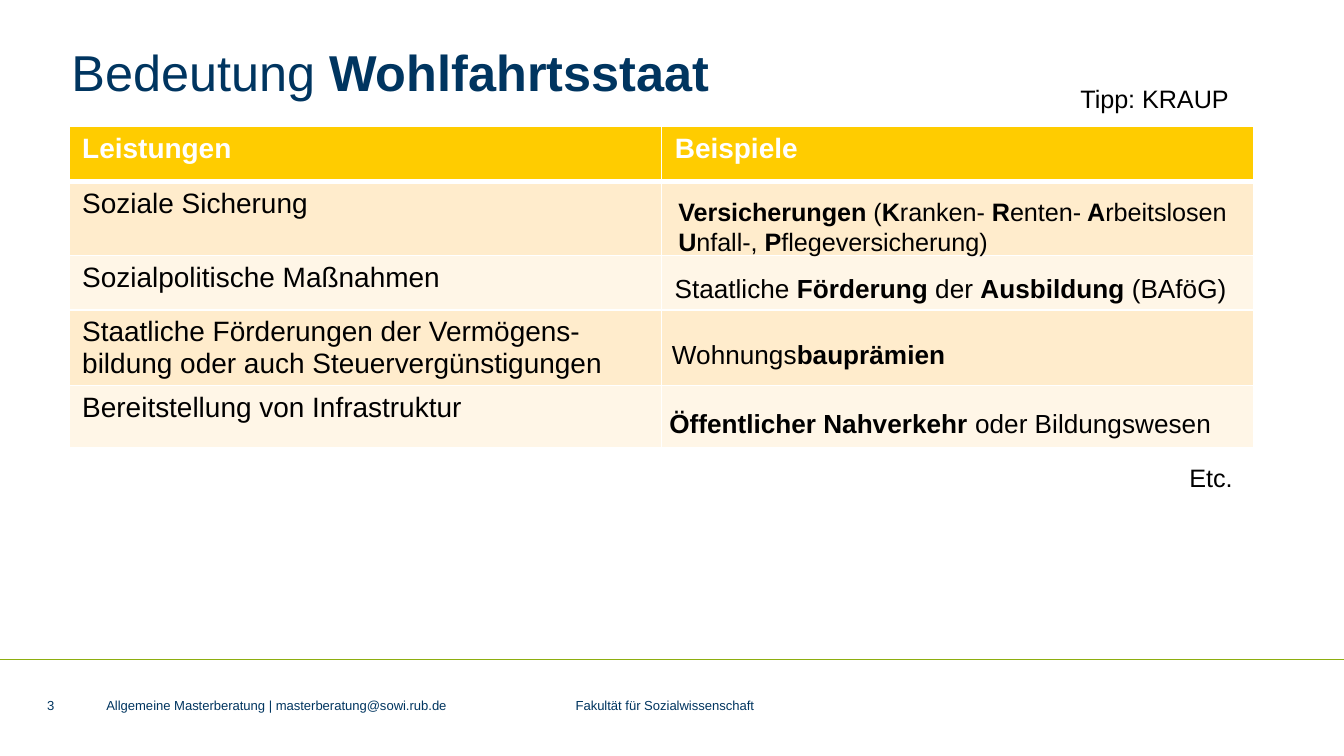
from lxml import etree
from pptx import Presentation
from pptx.dml.color import RGBColor
from pptx.enum.shapes import MSO_CONNECTOR
from pptx.enum.text import MSO_ANCHOR, MSO_AUTO_SIZE, PP_ALIGN
from pptx.oxml.ns import qn
from pptx.util import Cm, Pt

STRAIGHT = MSO_CONNECTOR.STRAIGHT
TOP, MIDDLE = MSO_ANCHOR.TOP, MSO_ANCHOR.MIDDLE
LEFT = PP_ALIGN.LEFT
NO_FIT, GROW = MSO_AUTO_SIZE.NONE, MSO_AUTO_SIZE.SHAPE_TO_FIT_TEXT

TITLE_ONLY = 5
FONT = "Arial"
COLORS = {
    "navy": "003560",
    "black": "000000",
    "white": "FFFFFF",
    "header": "FFCC00",
    "odd": "FFECCC",
    "even": "FFF6E7",
    "rule": "8DAE10",
}

BENEFITS = [
    "Soziale Sicherung",
    "Sozialpolitische Maßnahmen",
    "Staatliche Förderungen der Vermögens-bildung oder auch Steuervergünstigungen",
    "Bereitstellung von Infrastruktur",
]
EXAMPLES = [
    (12.57, 3.58, 1.98, 13.5,
     "**Versicherungen** (**K**ranken- **R**enten-** A**rbeitslosen "
     "**U**nfall-, **P**flegeversicherung)"),
    (12.5, 5.03, 0.86, 14, "Staatliche **Förderung** der **Ausbildung** (BAföG)"),
    (12.45, 6.27, 0.86, 14, "Wohnungs**bauprämien**"),
    (12.4, 7.57, 1.42, 14, "**Öffentlicher Nahverkehr **oder Bildungswesen"),
]


def write_text(frame, text, size=13.5, color="black", line_spacing=None, after=None, tab=None):
    para = frame.paragraphs[0]
    para.alignment = LEFT
    if line_spacing:
        para.line_spacing = line_spacing
    if after is not None:
        para.space_after = Pt(after)
    if tab:
        tabs = etree.SubElement(para._p.get_or_add_pPr(), qn("a:tabLst"))
        etree.SubElement(tabs, qn("a:tab"), pos=str(Cm(tab)), algn="l")
    for index, part in enumerate(text.split("**")):
        if part:
            span = para.add_run()
            span.text = part
            span.font.name = FONT
            span.font.size = Pt(size)
            span.font.bold = index % 2 == 1
            span.font.color.rgb = RGBColor.from_string(COLORS[color])


class PageBuilder:
    def __init__(self, page):
        self.page = page

    def frame_setup(self, frame, anchor, fit, wrap=True, inset=None):
        frame.word_wrap = wrap
        frame.auto_size = fit
        frame.vertical_anchor = anchor
        if inset is not None:
            frame.margin_left = frame.margin_right = Cm(inset)
            frame.margin_top = frame.margin_bottom = Cm(inset)

    def title(self, text, left, top, width, height):
        box = self.page.shapes.title
        box.left, box.top, box.width, box.height = Cm(left), Cm(top), Cm(width), Cm(height)
        self.frame_setup(box.text_frame, TOP, NO_FIT, inset=0)
        write_text(box.text_frame, text, size=27, color="navy", line_spacing=0.9)

    def rule(self, left, right, y):
        line = self.page.shapes.add_connector(STRAIGHT, Cm(left), Cm(y), Cm(right), Cm(y))
        line.line.color.rgb = RGBColor.from_string(COLORS["rule"])
        line.line.width = Pt(0.5)
        etree.SubElement(line._element.spPr, qn("a:effectLst"))

    def note(self, text, left, top, width, height, size=13.5, wrap=True):
        box = self.page.shapes.add_textbox(Cm(left), Cm(top), Cm(width), Cm(height))
        self.frame_setup(box.text_frame, TOP, GROW, wrap)
        write_text(box.text_frame, text, size=size)

    def footer(self, text, left, width, tab=None):
        box = self.page.shapes.add_textbox(Cm(left), Cm(13.21), Cm(width), Cm(0.3))
        self.frame_setup(box.text_frame, MIDDLE, NO_FIT, inset=0)
        write_text(box.text_frame, text, size=7, color="navy",
                   line_spacing=0.9, after=6, tab=tab)

    def cell_borders(self, cell, widths):
        properties = cell._tc.get_or_add_tcPr()
        for side, width in widths.items():
            line = etree.SubElement(properties, qn(f"a:ln{side}"), w=str(Pt(width)))
            fill = etree.SubElement(line, qn("a:solidFill"))
            etree.SubElement(fill, qn("a:srgbClr"), val=COLORS["white"])

    def table(self, rows, left, top, column_width, heights):
        columns = len(rows[0])
        table = self.page.shapes.add_table(
            len(rows), columns, Cm(left), Cm(top),
            Cm(column_width * columns), Cm(sum(heights))).table
        for column in table.columns:
            column.width = Cm(column_width)
        for number, (texts, height) in enumerate(zip(rows, heights)):
            table.rows[number].height = Cm(height)
            fill = "header" if number == 0 else "odd" if number % 2 else "even"
            widths = {"L": 1, "R": 1, "T": 3 if number == 1 else 1, "B": 3 if number == 0 else 1}
            for position, text in enumerate(texts):
                cell = table.cell(number, position)
                self.cell_borders(cell, widths)
                cell.fill.solid()
                cell.fill.fore_color.rgb = RGBColor.from_string(COLORS[fill])
                write_text(cell.text_frame, text, size=15,
                           color="black" if number else "white")


def main():
    deck = Presentation()
    deck.slide_width, deck.slide_height = Cm(25.4), Cm(14.29)
    builder = PageBuilder(deck.slides.add_slide(deck.slide_layouts[TITLE_ONLY]))

    builder.rule(0, 25.4, 12.47)
    builder.title("Bedeutung **Wohlfahrtsstaat**", 1.35, 0.91, 21, 1.3)
    builder.footer("Allgemeine Masterberatung | masterberatung@sowi.rub.de"
                   "\tFakultät für Sozialwissenschaft", 2.01, 17.5, tab=8.87)
    builder.footer("3", 0.89, 0.71)

    rows = [("**Leistungen**", "**Beispiele**")] + [(benefit, "") for benefit in BENEFITS]
    builder.table(rows, 1.3, 2.39, 11.2, [1.04, 1.4, 1.02, 1.42, 1.17])

    builder.note("Etc.", 22.23, 8.61, 1.35, 0.84, wrap=False)
    for left, top, height, size, text in EXAMPLES:
        builder.note(text, left, top, 11.4, height, size=size)
    builder.note("Tipp: KRAUP", 20.17, 1.45, 4.39, 0.84)

    deck.save("out.pptx")


if __name__ == "__main__":
    main()
